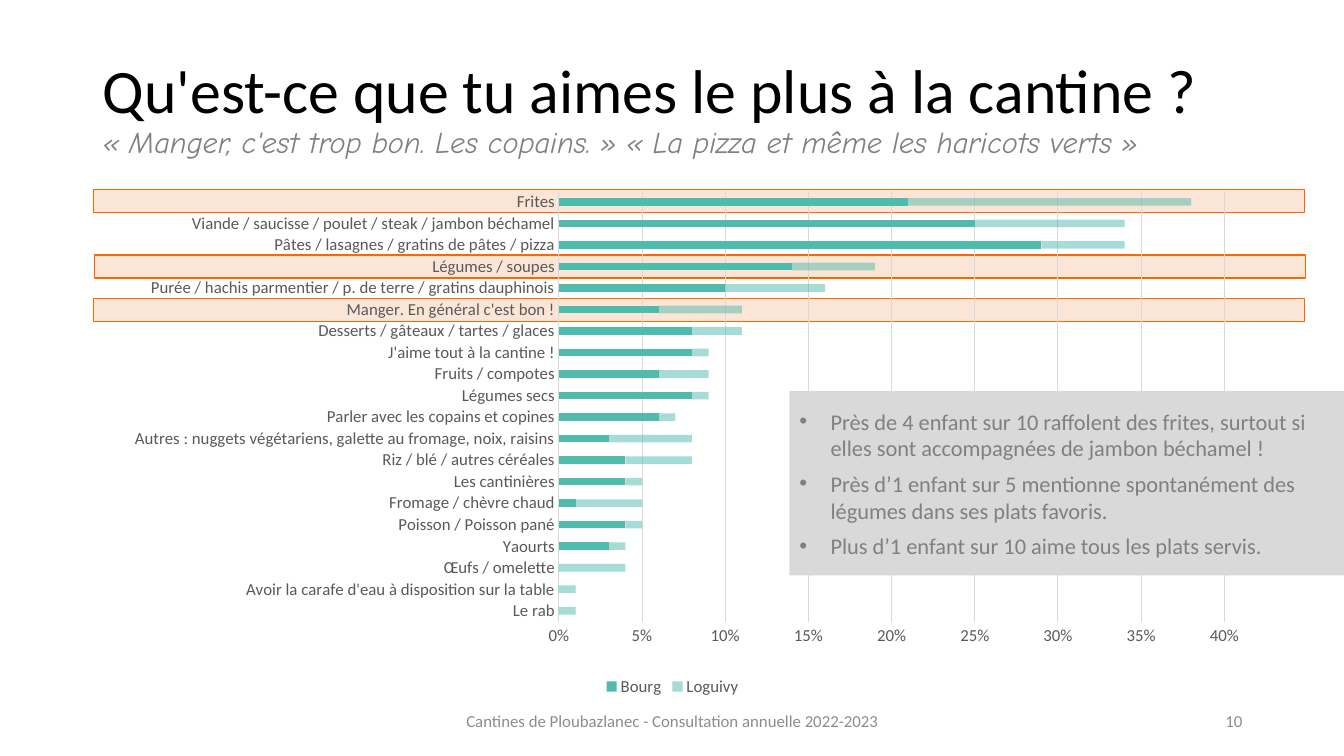
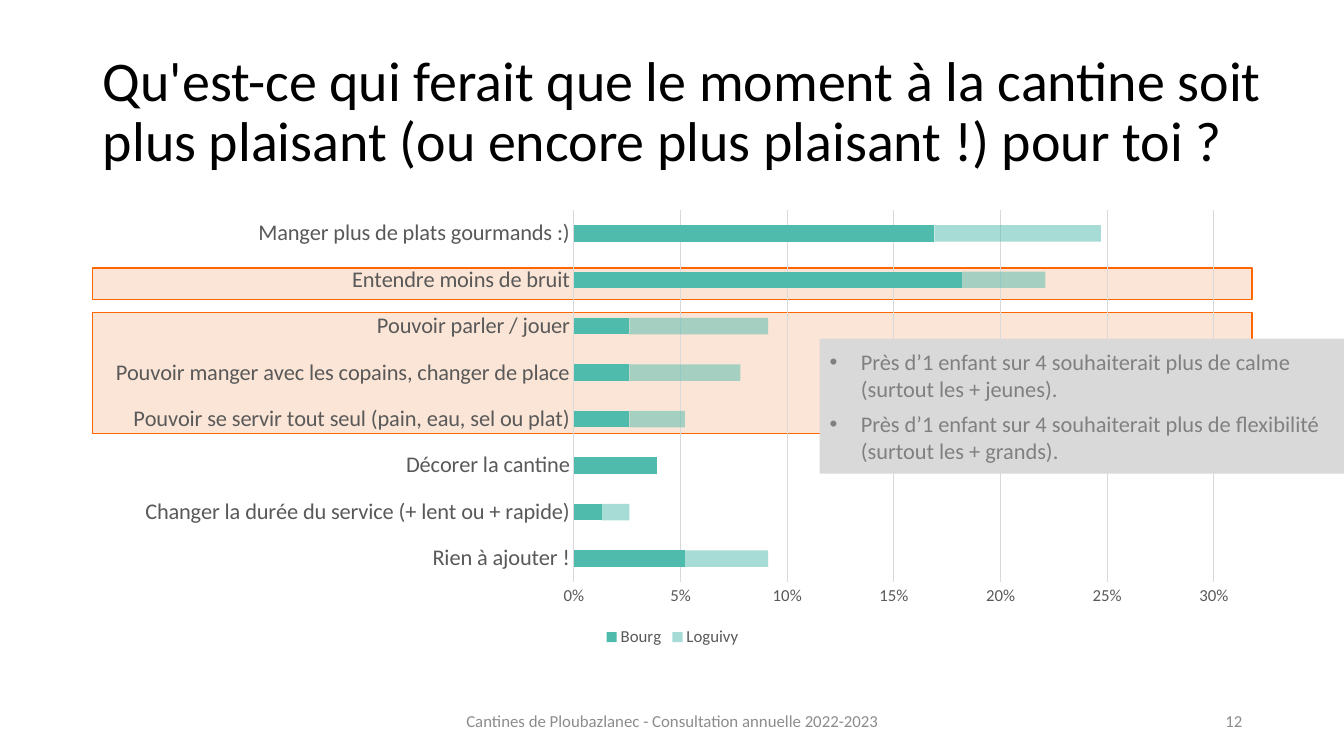
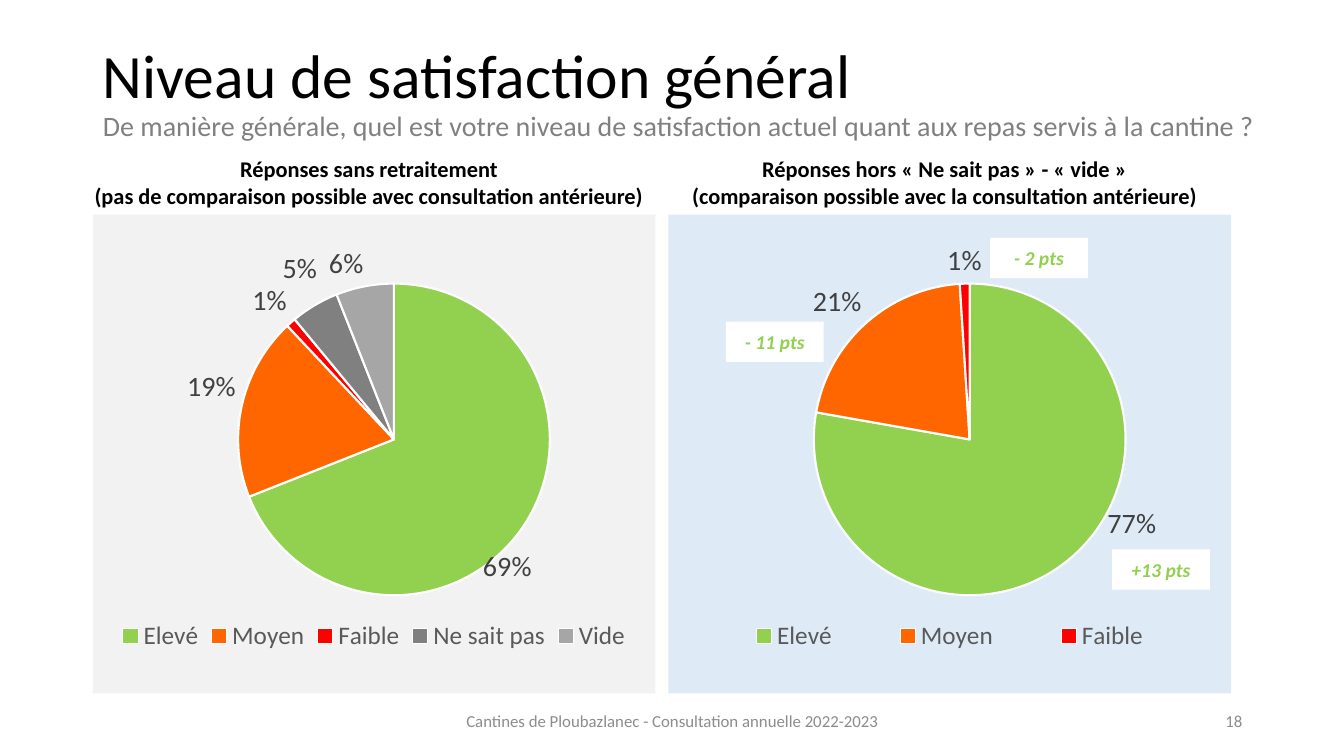
from lxml import etree
from pptx import Presentation
from pptx import util as u
from pptx.chart.data import CategoryChartData
from pptx.dml.color import RGBColor
from pptx.enum import chart as ch, shapes, text
from pptx.oxml import parse_xml
from pptx.oxml.ns import nsdecls, qn

PX = 9144  # EMU in one px, 100 px to the inch
FONT = "Calibri"
COLORS = {
    "black": "000000", "white": "FFFFFF", "muted": "808080", "footer": "8C8C8C",
    "axis": "595959", "label": "404040", "grid": "D9D9D9", "note": "D9D9D9",
    "teal": "4EBBAD", "orange": "FF6600", "peach": "FBE5D6", "green": "92D050",
    "red": "FF0000", "gray": "A6A6A6", "pale_gray": "F2F2F2", "pale_blue": "DEEBF7",
}
LEFT, CONTENT_W = 92, 1150
FOOTER = "Cantines de Ploubazlanec - Consultation annuelle 2022-2023"
LEVELS = [("Elevé", "green"), ("Moyen", "orange"), ("Faible", "red"),
          ("Ne sait pas", "muted"), ("Vide", "gray")]

# (answer, Bourg, Loguivy), from the bottom bar to the top one
FAVOURITES = [
    ("Le rab", 0, 0.01),
    ("Avoir la carafe d'eau à disposition sur la table", 0, 0.01),
    ("Œufs / omelette", 0, 0.04),
    ("Yaourts", 0.03, 0.01),
    ("Poisson / Poisson pané", 0.04, 0.01),
    ("Fromage / chèvre chaud", 0.01, 0.04),
    ("Les cantinières", 0.04, 0.01),
    ("Riz / blé / autres céréales", 0.04, 0.04),
    ("Autres : nuggets végétariens, galette au fromage, noix, raisins", 0.03, 0.05),
    ("Parler avec les copains et copines", 0.06, 0.01),
    ("Légumes secs", 0.08, 0.01),
    ("Fruits / compotes", 0.06, 0.03),
    ("J'aime tout à la cantine !", 0.08, 0.01),
    ("Desserts / gâteaux / tartes / glaces", 0.08, 0.03),
    ("Manger. En général c'est bon !", 0.06, 0.05),
    ("Purée / hachis parmentier / p. de terre / gratins dauphinois", 0.1, 0.06),
    ("Légumes / soupes", 0.14, 0.05),
    ("Pâtes / lasagnes / gratins de pâtes / pizza", 0.29, 0.05),
    ("Viande / saucisse / poulet / steak / jambon béchamel", 0.25, 0.09),
    ("Frites", 0.21, 0.17),
]
WISHES = [
    ("Rien à ajouter !", 0.052, 0.039),
    ("Changer la durée du service (+ lent ou + rapide)", 0.013, 0.013),
    ("Décorer la cantine", 0.039, 0),
    ("Pouvoir se servir tout seul (pain, eau, sel ou plat)", 0.026, 0.026),
    ("Pouvoir manger avec les copains, changer de place", 0.026, 0.052),
    ("Pouvoir parler / jouer", 0.026, 0.065),
    ("Entendre moins de bruit", 0.182, 0.039),
    ("Manger plus de plats gourmands :)", 0.169, 0.078),
]


def rgb(name):
    return RGBColor.from_string(COLORS[name])


def emu(box):
    return [u.Emu(v * PX) for v in box]


def style(font, size, color, name=FONT, bold=False, italic=False):
    font.name, font.size = name, u.Pt(size)
    font.bold, font.italic = bold, italic
    font.color.rgb = rgb(color)


def write(sp, lines, size, color, align, anchor=text.MSO_ANCHOR.MIDDLE, **look):
    """Fill a shape with one paragraph a line."""
    tf = sp.text_frame
    tf.word_wrap = True
    tf.vertical_anchor = anchor
    tf.text = "\n".join(lines)
    for p in tf.paragraphs:
        p.alignment = align
        for r in p.runs:
            style(r.font, size, color, **look)
    return tf


def textbox(slide, box, lines, size, color, align, **look):
    write(slide.shapes.add_textbox(*emu(box)), lines, size, color, align, **look)


def rect(slide, box, fill, line=None):
    sp = slide.shapes.add_shape(shapes.MSO_SHAPE.RECTANGLE, *emu(box))
    sp.shadow.inherit = False
    sp.fill.solid()
    sp.fill.fore_color.rgb = rgb(fill)
    if line:
        sp.line.color.rgb = rgb(line)
        sp.line.width = u.Pt(1)
    else:
        sp.line.fill.background()
    return sp


def new_slide(prs, number, box, runs, inset=5, anchor=text.MSO_ANCHOR.TOP):
    """Slide with its title (one styled run a line), footer and number."""
    slide = prs.slides.add_slide(prs.slide_layouts[5])
    sp = slide.shapes.title
    sp.left, sp.top, sp.width, sp.height = emu(box)
    tf = sp.text_frame
    tf.word_wrap, tf.auto_size = True, text.MSO_AUTO_SIZE.NONE
    tf.vertical_anchor, tf.margin_top = anchor, u.Emu(inset * PX)
    p = tf.paragraphs[0]
    p.text = "\v".join(r[0] for r in runs)
    p.alignment, p.line_spacing = text.PP_ALIGN.LEFT, 0.9
    for r, (_, size, color, look) in zip(p.runs, runs):
        style(r.font, size, color, **look)
    textbox(slide, (442, 695, 450, 40), [FOOTER], 12, "footer", text.PP_ALIGN.CENTER)
    textbox(slide, (942, 695, 300, 40), [str(number)], 12, "footer", text.PP_ALIGN.RIGHT)
    return slide


def note(slide, box, lines):
    """Grey panel of bulleted findings."""
    sp = rect(slide, box, "note")
    for p in write(sp, lines, 16, "muted", text.PP_ALIGN.LEFT).paragraphs:
        p.space_after = u.Pt(6)
        pPr = p._p.get_or_add_pPr()
        pPr.set("marL", str(31 * PX))
        pPr.set("indent", str(-31 * PX))
        etree.SubElement(pPr, qn("a:buFont")).set("typeface", "Arial")
        etree.SubElement(pPr, qn("a:buChar")).set("char", "•")


def layout_xml(values, edge=True):
    """Manual layout: fractions of the chart, or a shift when edge is False."""
    modes = '<c:xMode val="edge"/><c:yMode val="edge"/>' if edge else ""
    parts = "".join(f'<c:{k} val="{v}"/>' for k, v in zip("xywh", values))
    return parse_xml(f'<c:layout {nsdecls("c")}><c:manualLayout>{modes}{parts}'
                     '</c:manualLayout></c:layout>')


def set_layout(parent, index, layout):
    for old in parent.findall(qn("c:layout")):
        parent.remove(old)
    parent.insert(index, layout)


def add_chart(slide, kind, box, data, plot_box, legend_size, fill=None):
    """Chart with its background, plot position and bottom legend."""
    chart = slide.shapes.add_chart(kind, *emu(box), data).chart
    chart.has_title = False
    style(chart.font, 10, "black")
    chart.has_legend = True
    chart.legend.position = ch.XL_LEGEND_POSITION.BOTTOM
    chart.legend.include_in_layout = False
    style(chart.legend.font, legend_size, "axis")

    def background(color):
        paint = (f'<a:solidFill><a:srgbClr val="{COLORS[color]}"/></a:solidFill>'
                 if color else "<a:noFill/>")
        return parse_xml(f'<c:spPr {nsdecls("c", "a")}>{paint}'
                         '<a:ln><a:noFill/></a:ln></c:spPr>')

    root = chart.element
    plot_area = root.xpath("c:chart/c:plotArea")[0]
    layout = layout_xml(plot_box)
    target = etree.Element(qn("c:layoutTarget"))
    target.set("val", "inner")
    layout[0].insert(0, target)
    set_layout(plot_area, 0, layout)
    plot_area.append(background(None))
    root.xpath("c:chart")[0].addnext(background(fill))
    return chart


def bar_chart(slide, box, rows, plot_box, cat_size, top):
    """Stacked bars of the answers in the two schools."""
    data = CategoryChartData(number_format="0%")
    names, bourg, loguivy = zip(*rows)
    data.categories = names
    data.add_series("Bourg", bourg)
    data.add_series("Loguivy", loguivy)
    chart = add_chart(slide, ch.XL_CHART_TYPE.BAR_STACKED, box, data, plot_box, 12)
    plot = chart.plots[0]
    plot.gap_width, plot.overlap, plot.vary_by_categories = 182, 100, False
    for s in plot.series:
        s.format.fill.solid()
        s.format.fill.fore_color.rgb = rgb("teal")
    # The second school is half transparent
    clr = plot.series[1].format.fill._xPr.find(".//" + qn("a:srgbClr"))
    etree.SubElement(clr, qn("a:alpha")).set("val", "50000")

    cat, val = chart.category_axis, chart.value_axis
    for axis, size in ((cat, cat_size), (val, 12)):
        axis.major_tick_mark = axis.minor_tick_mark = ch.XL_TICK_MARK.NONE
        style(axis.tick_labels.font, size, "axis")
    val.minimum_scale, val.maximum_scale, val.major_unit = 0, top, 0.05
    val.tick_labels.number_format = "0%"
    val.tick_labels.number_format_is_linked = False
    val.format.line.fill.background()
    cat.has_major_gridlines, val.has_major_gridlines = False, True
    for line in (cat.format.line, val.major_gridlines.format.line):
        line.color.rgb = rgb("grid")
        line.width = u.Pt(0.75)


def pie_panel(slide, box, heading, values, fill, label_shifts, legend_box):
    """Heading over a tinted pie chart; label_shifts maps a slice to its shift."""
    x, y, w, h = box
    textbox(slide, (x - 9, y - 64, w + 8, 64), heading, 16, "black",
            text.PP_ALIGN.CENTER, bold=True)
    data = CategoryChartData(number_format="0%")
    data.categories = [name for name, _ in LEVELS[:len(values)]]
    data.add_series("Satisfaction", values)
    chart = add_chart(slide, ch.XL_CHART_TYPE.PIE, box, data,
                      (0.235, 0.144, 0.601, 0.651), 18, fill)
    plot = chart.plots[0]
    plot.vary_by_categories = True
    s = plot.series[0]
    for i, (_, color) in enumerate(LEVELS[:len(values)]):
        fmt = s.points[i].format
        fmt.fill.solid()
        fmt.fill.fore_color.rgb = rgb(color)
        fmt.line.color.rgb = rgb("white")
        fmt.line.width = u.Pt(1.5)
    labels = s.data_labels
    labels.show_value = True
    labels.number_format, labels.number_format_is_linked = "0%", False
    moved = [s.points[i].data_label for i in label_shifts]
    for label in (labels, *moved):
        label.position = ch.XL_LABEL_POSITION.OUTSIDE_END
        style(label.font, 20, "label")
    root = chart.element
    for dLbl, shift in zip(root.xpath("//c:dLbl"), label_shifts.values()):
        set_layout(dLbl, 1, layout_xml(shift, edge=False))
    for leader in root.xpath("//c:showLeaderLines"):
        leader.set("val", "0")
    set_layout(root.xpath("//c:legend")[0], 1, layout_xml(legend_box))


def favourites_slide(prs):
    slide = new_slide(prs, 10, (LEFT, 51, 1242, 145), [
        ("Qu'est-ce que tu aimes le plus à la cantine ?", 44.1, "black", {}),
        ("« Manger, c'est trop bon. Les copains. » « La pizza et même les haricots verts »",
         21.6, "muted", {"name": "Comic Neue", "italic": True})], inset=9)
    for x, y in ((93, 296), (94, 253), (93, 188)):
        rect(slide, (x, y, 1201, 23), "peach", "orange")
    bar_chart(slide, (LEFT, 173, CONTENT_W, 522), FAVOURITES,
              (0.402, 0.032, 0.574, 0.818), 12, 0.4)
    note(slide, (783, 388, 550, 183), [
        "Près de 4 enfant sur 10 raffolent des frites, surtout si elles sont "
        "accompagnées de jambon béchamel !",
        "Près d’1 enfant sur 5 mentionne spontanément des légumes dans ses plats favoris.",
        "Plus d’1 enfant sur 10 aime tous les plats servis."])


def wishes_slide(prs):
    slide = new_slide(prs, 12, (LEFT, 40, 1221, 145), [
        ("Qu'est-ce qui ferait que le moment à la cantine soit plus plaisant "
         "(ou encore plus plaisant !) pour toi ?", 40, "black", {})],
        anchor=text.MSO_ANCHOR.MIDDLE)
    for y, h in ((310, 120), (266, 31)):
        rect(slide, (LEFT, y, CONTENT_W, h), "peach", "orange")
    bar_chart(slide, (LEFT, 200, CONTENT_W, 446), WISHES,
              (0.415, 0.019, 0.552, 0.827), 16, 0.3)
    note(slide, (813, 336, 520, 134), [
        "Près d’1 enfant sur 4 souhaiterait plus de calme (surtout les + jeunes).",
        "Près d’1 enfant sur 4 souhaiterait plus de flexibilité (surtout les + grands)."])


def satisfaction_slide(prs):
    slide = new_slide(prs, 18, (LEFT, 40, 1242, 145), [
        ("Niveau de satisfaction général", 44, "black", {}),
        ("De manière générale, quel est votre niveau de satisfaction actuel quant aux "
         "repas servis à la cantine ?", 20, "muted", {})])
    pie_panel(slide, (LEFT, 213, 558, 475),
              ["Réponses sans retraitement",
               "(pas de comparaison possible avec consultation antérieure)"],
              (0.69, 0.19, 0.01, 0.05, 0.06), "pale_gray",
              {0: (-0.08, 0.04), 3: (0.01, -0.03)}, (0.03, 0.84, 0.94, 0.08))
    pie_panel(slide, (663, 213, 558, 475),
              ["Réponses hors « Ne sait pas » - « vide »",
               "(comparaison possible avec la consultation antérieure)"],
              (0.77, 0.21, 0.01), "pale_blue",
              {0: (0.06, -0.12)}, (0.05, 0.84, 0.9, 0.08))
    # Change since the previous survey
    for x, y, change in ((720, 319, "- 11 pts"), (1103, 545, "+13 pts"),
                         (982, 236, "- 2 pts")):
        write(rect(slide, (x, y, 97, 40), "white"), [change], 14, "green",
              text.PP_ALIGN.CENTER, bold=True, italic=True)


def main():
    prs = Presentation()
    prs.slide_width, prs.slide_height = emu((1333, 750))
    favourites_slide(prs)
    wishes_slide(prs)
    satisfaction_slide(prs)
    prs.save("out.pptx")


if __name__ == "__main__":
    main()
